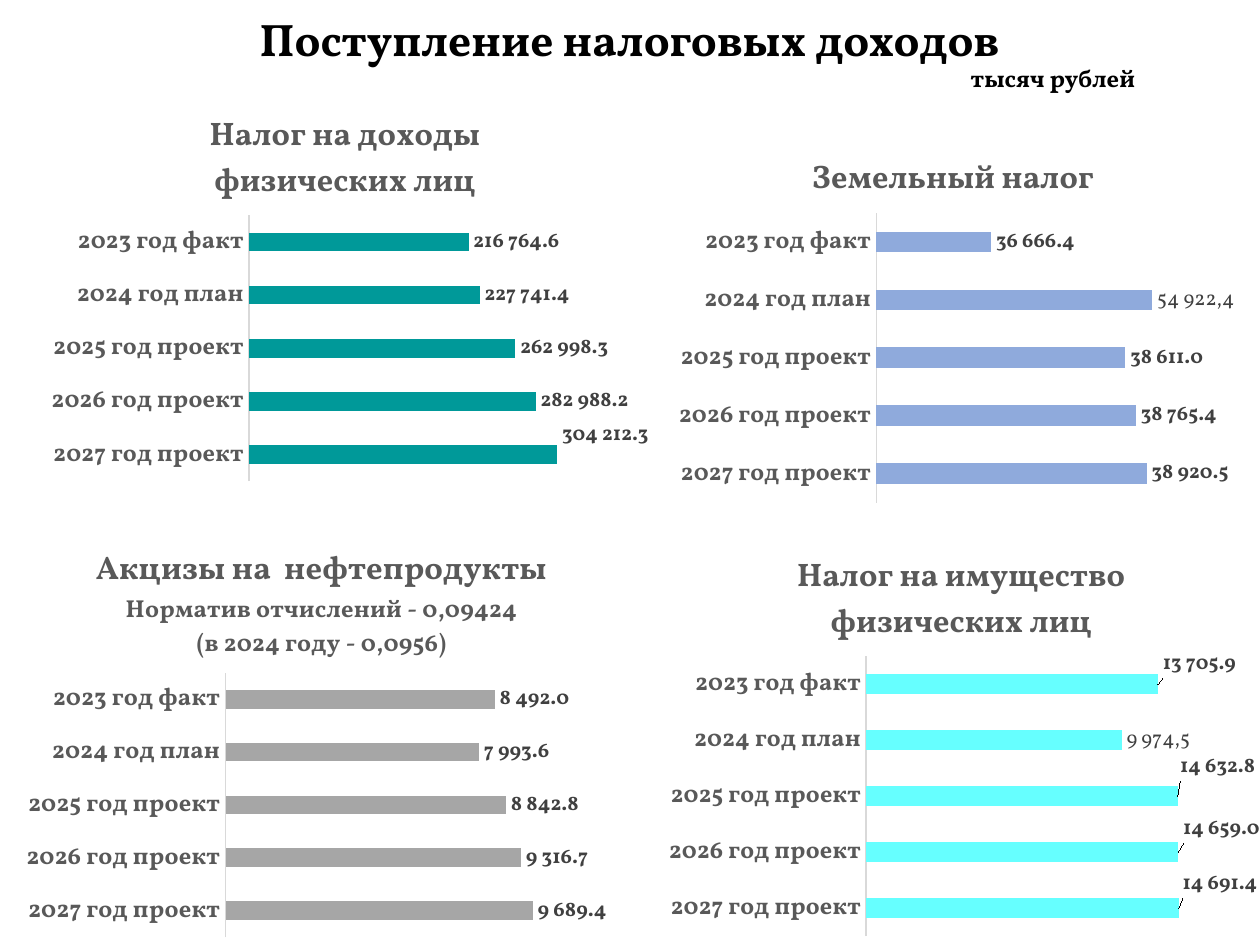
"""Builds a slide with four bar charts of tax revenue by year."""
import dataclasses

import lxml.etree
import pptx
import pptx.chart.data
import pptx.dml.color
import pptx.enum.chart
import pptx.enum.text
import pptx.oxml.ns
import pptx.util

Inches = pptx.util.Inches
YEARS = ["2023 год факт", "2024 год план", "2025 год проект", "2026 год проект", "2027 год проект"]


@dataclasses.dataclass
class Theme:
    font: str = "Vollkorn"
    base_font: str = "Calibri"
    base_size: float = 10
    heading: str = "000000"
    muted: str = "595959"
    label: str = "404040"
    axis: str = "D9D9D9"
    heading_size: float = 26
    body_size: float = 14
    chart_title_size: float = 18.6
    label_size: float = 11.9
    number_format: str = "#\\ ##0.0"


class SlideBuilder:
    def __init__(self, slide, theme):
        self.slide = slide
        self.theme = theme

    def style_font(self, font, size, color, bold=True):
        font.name = self.theme.font
        font.size = pptx.util.Pt(size)
        font.bold = bold
        font.color.rgb = pptx.dml.color.RGBColor.from_string(color)

    def add_text(self, text, box, size, alignment):
        shape = self.slide.shapes.add_textbox(*map(Inches, box))
        frame = shape.text_frame
        frame.word_wrap = True
        frame.margin_left = frame.margin_right = frame.margin_top = frame.margin_bottom = 0
        paragraph = frame.paragraphs[0]
        paragraph.text = text
        paragraph.alignment = alignment
        self.style_font(paragraph.font, size, self.theme.heading)

    def set_layout(self, parent, index, **values):
        name = pptx.oxml.ns.qn
        for old in parent.findall(name("c:layout")):
            parent.remove(old)
        layout = lxml.etree.Element(name("c:layout"))
        manual = lxml.etree.SubElement(layout, name("c:manualLayout"))
        for key, value in values.items():
            text = value if isinstance(value, str) else f"{value:.4f}"
            lxml.etree.SubElement(manual, name(f"c:{key}")).set("val", text)
        parent.insert(index, layout)

    def add_bar_chart(self, title, values, color, box, plot, title_at, scale, custom=None, lifted=None):
        theme = self.theme
        left, top, width, height = box
        data = pptx.chart.data.CategoryChartData(number_format=theme.number_format)
        data.categories = YEARS
        data.add_series(title, values)
        chart = self.slide.shapes.add_chart(
            pptx.enum.chart.XL_CHART_TYPE.BAR_CLUSTERED, *map(Inches, box), data).chart
        chart.has_legend = False
        chart.font.name = theme.base_font
        chart.font.size = pptx.util.Pt(theme.base_size)

        chart.has_title = True
        frame = chart.chart_title.text_frame
        frame.text = title
        for number, paragraph in enumerate(frame.paragraphs):
            size = theme.body_size if number else theme.chart_title_size
            self.style_font(paragraph.font, size, theme.muted)
        root = chart.element if hasattr(chart, "element") else chart._chartSpace
        self.set_layout(root.find(".//" + pptx.oxml.ns.qn("c:title")), 1, xMode="edge", yMode="edge",
                        x=(title_at[0] - left) / width, y=(title_at[1] - top) / height)
        self.set_layout(root.find(".//" + pptx.oxml.ns.qn("c:plotArea")), 0, layoutTarget="inner",
                        xMode="edge", yMode="edge", x=(plot[0] - left) / width,
                        y=(plot[1] - top) / height, w=plot[2] / width, h=plot[3] / height)

        axis = chart.category_axis
        axis.reverse_order = True
        axis.major_tick_mark = pptx.enum.chart.XL_TICK_MARK.NONE
        axis.format.line.width = pptx.util.Pt(0.75)
        axis.format.line.color.rgb = pptx.dml.color.RGBColor.from_string(theme.axis)
        self.style_font(axis.tick_labels.font, theme.body_size, theme.muted)
        chart.value_axis.minimum_scale, chart.value_axis.maximum_scale = scale
        chart.value_axis.has_major_gridlines = False
        chart.value_axis.visible = False

        bars = chart.plots[0]
        bars.gap_width = 182
        bars.vary_by_categories = False
        series = bars.series[0]
        series.format.fill.solid()
        series.format.fill.fore_color.rgb = pptx.dml.color.RGBColor.from_string(color)
        labels = series.data_labels
        labels.show_value = True
        labels.number_format = theme.number_format
        labels.number_format_is_linked = False
        labels.position = pptx.enum.chart.XL_LABEL_POSITION.OUTSIDE_END
        self.style_font(labels.font, theme.label_size, theme.label)
        for index, text in (custom or {}).items():
            label = series.points[index].data_label
            label.text_frame.text = text
            label.position = pptx.enum.chart.XL_LABEL_POSITION.OUTSIDE_END
            run = label.text_frame.paragraphs[0].runs[0]
            self.style_font(run.font, theme.label_size, theme.label, bold=False)
        for index, (shift, rise) in (lifted or {}).items():
            self.lift_label(series, root, index, shift / width, -rise / height)

    def lift_label(self, series, root, index, x, y):
        label = series.points[index].data_label
        label.position = pptx.enum.chart.XL_LABEL_POSITION.OUTSIDE_END
        self.style_font(label.font, self.theme.label_size, self.theme.label)
        element = root.xpath(f".//c:dLbl[c:idx/@val='{index}']")[0]
        self.set_layout(element, 1, x=x, y=y)
        number_format = lxml.etree.Element(pptx.oxml.ns.qn("c:numFmt"))
        number_format.set("formatCode", self.theme.number_format)
        number_format.set("sourceLinked", "0")
        element.insert(2, number_format)


def main():
    presentation = pptx.Presentation()
    presentation.slide_width = Inches(10)
    presentation.slide_height = Inches(7.5)
    theme = Theme()
    builder = SlideBuilder(presentation.slides.add_slide(presentation.slide_layouts[6]), theme)
    builder.add_text("Поступление налоговых доходов", (0, 0.09, 10, 0.5),
                     theme.heading_size, pptx.enum.text.PP_ALIGN.CENTER)
    builder.add_text("тысяч рублей", (7.01, 0.5, 2, 0.3),
                     theme.body_size, pptx.enum.text.PP_ALIGN.RIGHT)
    builder.add_bar_chart(
        "Налог на доходы физических лиц", (216764.6, 227741.4, 262998.3, 282988.2, 304212.3), "009999",
        box=(0.4, 0.65, 4.75, 3.25), plot=(1.99, 1.71, 2.84, 2.11), title_at=(1.63, 0.83),
        scale=(0, 350000), lifted={4: (0, 0.15)})
    builder.add_bar_chart(
        "Земельный налог", (36666.4, 39000, 38611, 38765.4, 38920.5), "8FAADC",
        box=(5.39, 0.99, 4.41, 3.06), plot=(6.96, 1.69, 2.49, 2.3), title_at=(6.4, 1.17),
        scale=(35000, 39500), custom={1: "54 922,4"})
    builder.add_bar_chart(
        "Акцизы на  нефтепродукты\nНорматив отчислений - 0,09424\n(в 2024 году - 0,0956)",
        (8492, 7993.6, 8842.8, 9316.7, 9689.4), "A6A6A6",
        box=(0.12, 4.14, 4.8, 3.36), plot=(1.79, 5.34, 3.02, 2.1), title_at=(0.73, 4.3),
        scale=(0, 12000))
    builder.add_bar_chart(
        "Налог на имущество физических лиц", (13705.9, 12000, 14632.8, 14659, 14691.4), "66FFFF",
        box=(5.31, 4.14, 4.69, 3.36), plot=(6.88, 5.21, 2.73, 2.22), title_at=(6.28, 4.33),
        scale=(0, 16000), custom={1: "9 974,5"},
        lifted={0: (0, 0.16), 2: (-0.02, 0.23), 3: (0, 0.18), 4: (-0.01, 0.19)})
    presentation.save("out.pptx")


if __name__ == "__main__":
    main()
